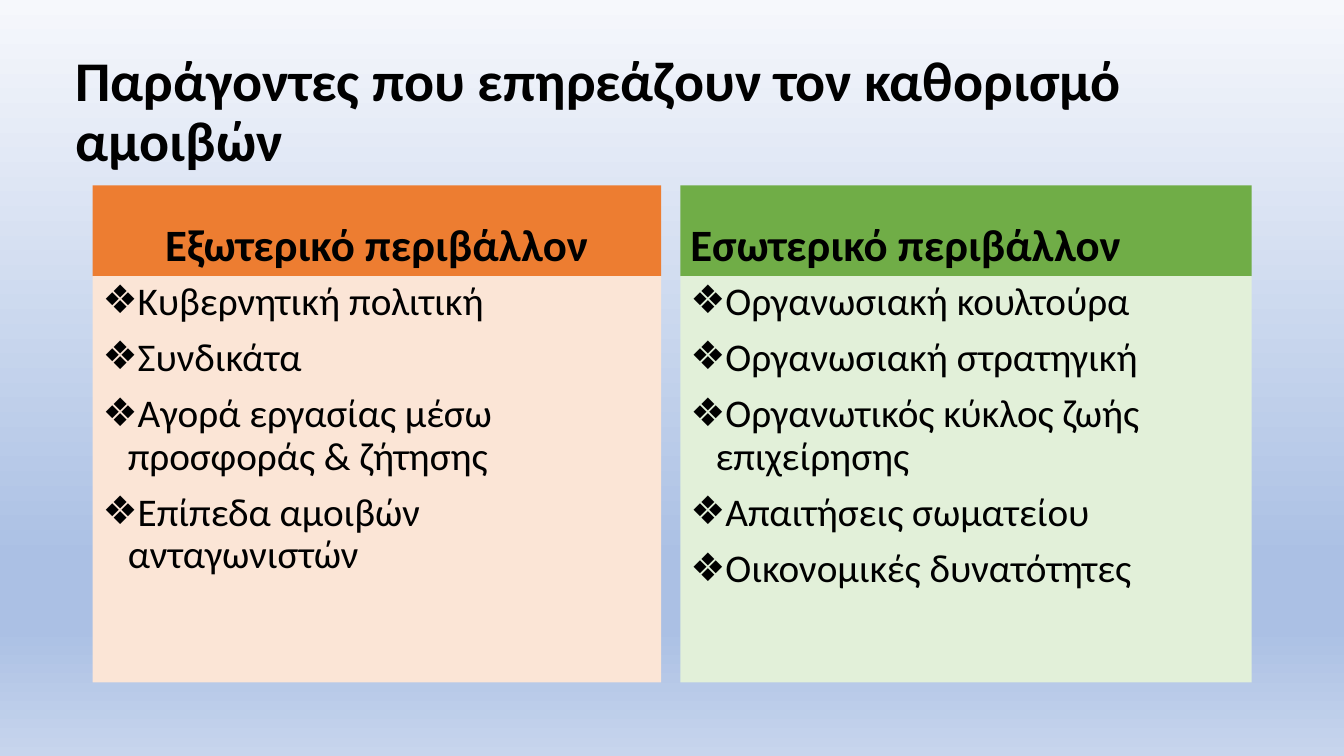
from lxml.etree import SubElement
from pptx import Presentation
from pptx.dml.color import RGBColor
from pptx.enum.shapes import MSO_SHAPE
from pptx.enum.text import MSO_ANCHOR, MSO_AUTO_SIZE, PP_ALIGN
from pptx.oxml.ns import qn
from pptx.util import Pt

TITLE = "Παράγοντες που επηρεάζουν τον καθορισμό αμοιβών"
COLUMNS = [
    {
        "heading": "Εξωτερικό περιβάλλον",
        "align": PP_ALIGN.CENTER,
        "left": 66.2,
        "width": 406,
        "fills": ("orange", "pale_orange"),
        "factors": [
            "Κυβερνητική πολιτική",
            "Συνδικάτα",
            "Αγορά εργασίας μέσω προσφοράς & ζήτησης",
            "Επίπεδα αμοιβών ανταγωνιστών",
        ],
    },
    {
        "heading": "Εσωτερικό περιβάλλον",
        "align": PP_ALIGN.LEFT,
        "left": 486,
        "width": 408,
        "fills": ("green", "pale_green"),
        "factors": [
            "Οργανωσιακή κουλτούρα",
            "Οργανωσιακή στρατηγική",
            "Οργανωτικός κύκλος ζωής επιχείρησης",
            "Απαιτήσεις σωματείου",
            "Οικονομικές δυνατότητες",
        ],
    },
]
COLORS = {
    "text": "000000",
    "orange": "ED7D31",
    "pale_orange": "FBE5D6",
    "green": "70AD47",
    "pale_green": "E2F0D9",
    "sky_top": "F6F8FC",
    "sky_deep": "ABC0E4",
    "sky_bottom": "C7D5ED",
}
BACKGROUND = [(0, "sky_top"), (74, "sky_deep"), (83, "sky_deep"), (100, "sky_bottom")]
FONT = "Calibri"
BULLET = "❖"
HEADING_TOP, HEADING_HEIGHT, LIST_HEIGHT = 132.5, 64.8, 290.2
INDENT = Pt(18)


def rgb(name):
    return RGBColor.from_string(COLORS[name])


def paint_background(slide):
    fill = slide.background.fill
    fill.gradient()
    fill.gradient_angle = 270
    stops = slide.element.find(".//" + qn("a:gsLst"))
    for stop in list(stops):
        stops.remove(stop)
    for percent, color in BACKGROUND:
        stop = SubElement(stops, qn("a:gs"), pos=str(percent * 1000))
        SubElement(stop, qn("a:srgbClr"), val=COLORS[color])


def write(tf, lines, size, bold, align, anchor, space_before):
    tf.word_wrap = True
    tf.auto_size = MSO_AUTO_SIZE.NONE
    tf.vertical_anchor = anchor
    tf.text = "\n".join(lines)
    for p in tf.paragraphs:
        p.alignment = align
        p.line_spacing = 0.9
        p.space_before = Pt(space_before)
        for r in p.runs:
            r.font.name = FONT
            r.font.size = Pt(size)
            r.font.bold = bold
            r.font.color.rgb = rgb("text")


def add_panel(slide, left, top, width, height, color):
    sp = slide.shapes.add_shape(
        MSO_SHAPE.RECTANGLE, Pt(left), Pt(top), Pt(width), Pt(height))
    sp.shadow.inherit = False
    sp.fill.solid()
    sp.fill.fore_color.rgb = rgb(color)
    sp.line.fill.background()
    return sp.text_frame


def add_bullets(tf):
    for p in tf.paragraphs:
        pPr = p._p.get_or_add_pPr()
        pPr.set("marL", str(INDENT))
        pPr.set("indent", str(-INDENT))
        SubElement(pPr, qn("a:buFont"), typeface=FONT)
        SubElement(pPr, qn("a:buChar"), char=BULLET)


def main():
    prs = Presentation()
    prs.slide_width, prs.slide_height = Pt(960), Pt(540)
    slide = prs.slides.add_slide(prs.slide_layouts[5])
    paint_background(slide)

    title = slide.shapes.title
    title.left, title.top, title.width, title.height = Pt(46.8), Pt(28.8), Pt(882.7), Pt(104.4)
    write(title.text_frame, [TITLE], 40, True, PP_ALIGN.LEFT, MSO_ANCHOR.MIDDLE, 0)

    for column in COLUMNS:
        left, width = column["left"], column["width"]
        heading_fill, list_fill = column["fills"]
        tf = add_panel(slide, left, HEADING_TOP, width, HEADING_HEIGHT, heading_fill)
        write(tf, [column["heading"]], 32, True, column["align"], MSO_ANCHOR.BOTTOM, 10)
        tf = add_panel(slide, left, HEADING_TOP + HEADING_HEIGHT, width, LIST_HEIGHT, list_fill)
        write(tf, column["factors"], 28, False, PP_ALIGN.LEFT, MSO_ANCHOR.TOP, 10)
        add_bullets(tf)

    prs.save("out.pptx")


if __name__ == "__main__":
    main()
